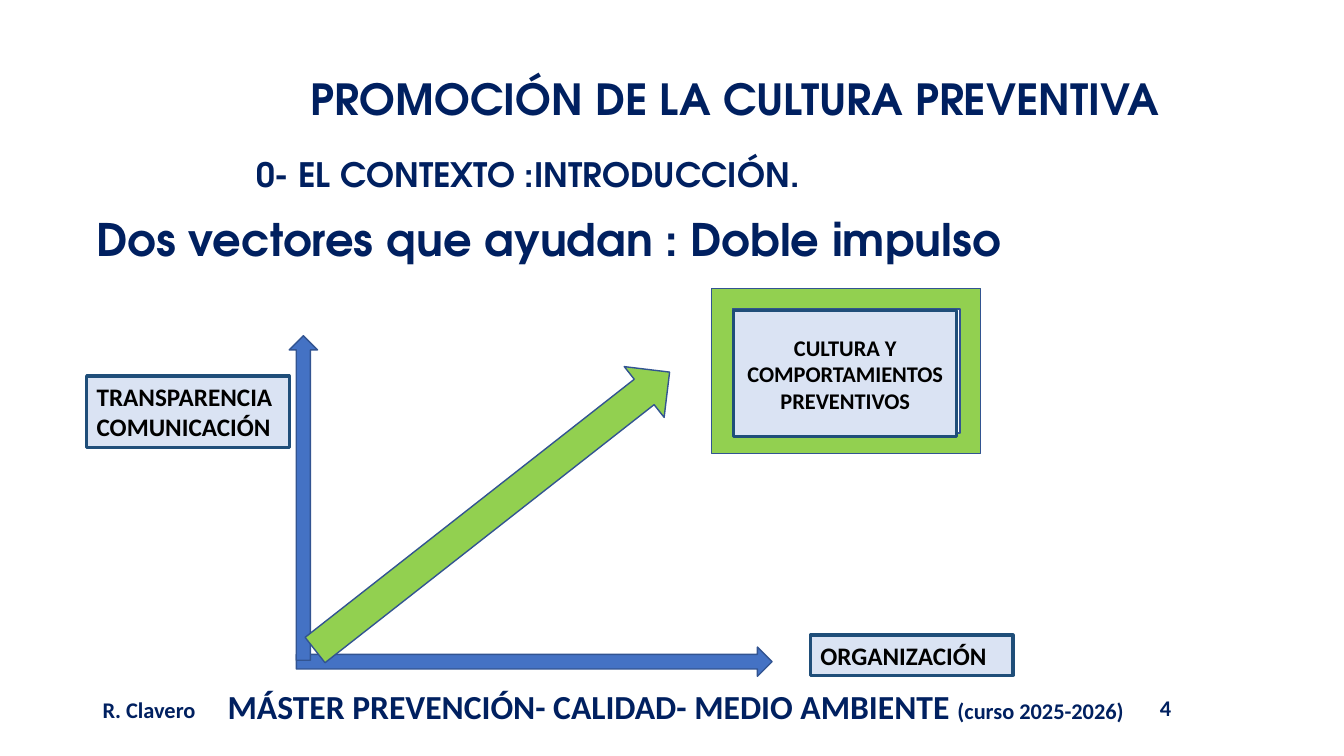
"""Build the slide on the two vectors that drive a preventive culture."""
import pptx
import pptx.dml.color
import pptx.enum.shapes
import pptx.enum.text
import pptx.util

Pt = pptx.util.Pt
KIND = pptx.enum.shapes.MSO_SHAPE
ALIGN = pptx.enum.text.PP_ALIGN
ANCHOR = pptx.enum.text.MSO_ANCHOR
NAVY = "002060"
BLUE = "4472C4"
GREEN = "92D050"
HEAD = "TeX Gyre Adventor"
BODY = "Calibri"


def color(code):
    return pptx.dml.color.RGBColor.from_string(code)


def style(run, size, face, ink):
    run.font.size = Pt(size)
    run.font.name = face
    run.font.bold = True
    run.font.color.rgb = color(ink)


def write(shape, text, size, face=BODY, ink=NAVY, align=ALIGN.LEFT,
          space=1.0, anchor=ANCHOR.TOP):
    frame = shape.text_frame
    frame.text = text
    frame.word_wrap = True
    frame.auto_size = pptx.enum.text.MSO_AUTO_SIZE.NONE
    frame.vertical_anchor = anchor
    line = frame.paragraphs[0]
    line.alignment = align
    line.line_spacing = space
    for run in line.runs:
        style(run, size, face, ink)
    return frame


def label(slide, box, text, size, **look):
    shape = slide.shapes.add_textbox(*map(Pt, box))
    return write(shape, text, size, **look)


def solid(slide, kind, box, fill, edge="325491", width=1, turn=0):
    shape = slide.shapes.add_shape(kind, *map(Pt, box))
    shape.shadow.inherit = False
    shape.fill.solid()
    shape.fill.fore_color.rgb = color(fill)
    shape.line.color.rgb = color(edge)
    shape.line.width = Pt(width)
    shape.rotation = turn
    return shape


def panel(slide, box, text, size, **look):
    shape = solid(slide, KIND.RECTANGLE, box, "DAE3F3", "1F4E79", 2.25)
    return write(shape, text, size, ink="000000", **look)


def title(slide, box, text):
    shape = slide.shapes.title
    shape.left, shape.top, shape.width, shape.height = map(Pt, box)
    frame = write(shape, text, 24, face=HEAD, space=0.9, anchor=ANCHOR.MIDDLE)
    frame.margin_left = frame.margin_right = Pt(6.5)
    frame.margin_top = frame.margin_bottom = Pt(3)


def footer(slide):
    label(slide, (66.2, 493.9, 98.6, 28.8), "R. Clavero", 16)
    frame = label(slide, (155.5, 486.7, 655.2, 28.8),
                  "MÁSTER PREVENCIÓN- CALIDAD- MEDIO AMBIENTE ", 24)
    frame.word_wrap = False
    run = frame.paragraphs[0].add_run()
    run.text = "(curso 2025-2026)"
    style(run, 16, BODY, NAVY)
    label(slide, (821.5, 492.5, 72, 27.4), "4", 16)


def main():
    deck = pptx.Presentation()
    deck.slide_width, deck.slide_height = Pt(960), Pt(540)
    slide = deck.slides.add_slide(deck.slide_layouts[5])

    footer(slide)
    label(slide, (155.5, 51.8, 738.7, 43.9),
          "PROMOCIÓN DE LA CULTURA PREVENTIVA", 30.6, face=HEAD,
          align=ALIGN.CENTER, space=0.8, anchor=ANCHOR.MIDDLE)
    title(slide, (176.4, 108.7, 750.2, 34.6), "0- EL CONTEXTO :INTRODUCCIÓN.")
    label(slide, (61.9, 155.3, 828.7, 40),
          "Dos vectores que ayudan : Doble impulso", 32, face=HEAD, space=0.8)

    for box, fill, turn in (
        ((211.7, 462.2, 339.8, 20.9), BLUE, 0),
        ((100.8, 345.6, 231.8, 20.2), BLUE, 270),
        ((190.8, 342, 321.8, 46.1), GREEN, 321.9),
    ):
        solid(slide, KIND.RIGHT_ARROW, box, fill, turn=turn)

    panel(slide, (61.9, 268.6, 144.7, 51.1),
          "TRANSPARENCIA\vCOMUNICACIÓN", 18)
    panel(slide, (578.9, 453.6, 144.7, 28.8), "ORGANIZACIÓN", 18)
    solid(slide, KIND.FRAME, (508.3, 205.9, 192.2, 118.1), GREEN)
    frame = panel(slide, (524.2, 221.8, 159.1, 90),
                  "CULTURA Y COMPORTAMIENTOS PREVENTIVOS", 16,
                  align=ALIGN.CENTER)
    frame.margin_top = Pt(16.5)
    deck.save("out.pptx")


if __name__ == "__main__":
    main()
